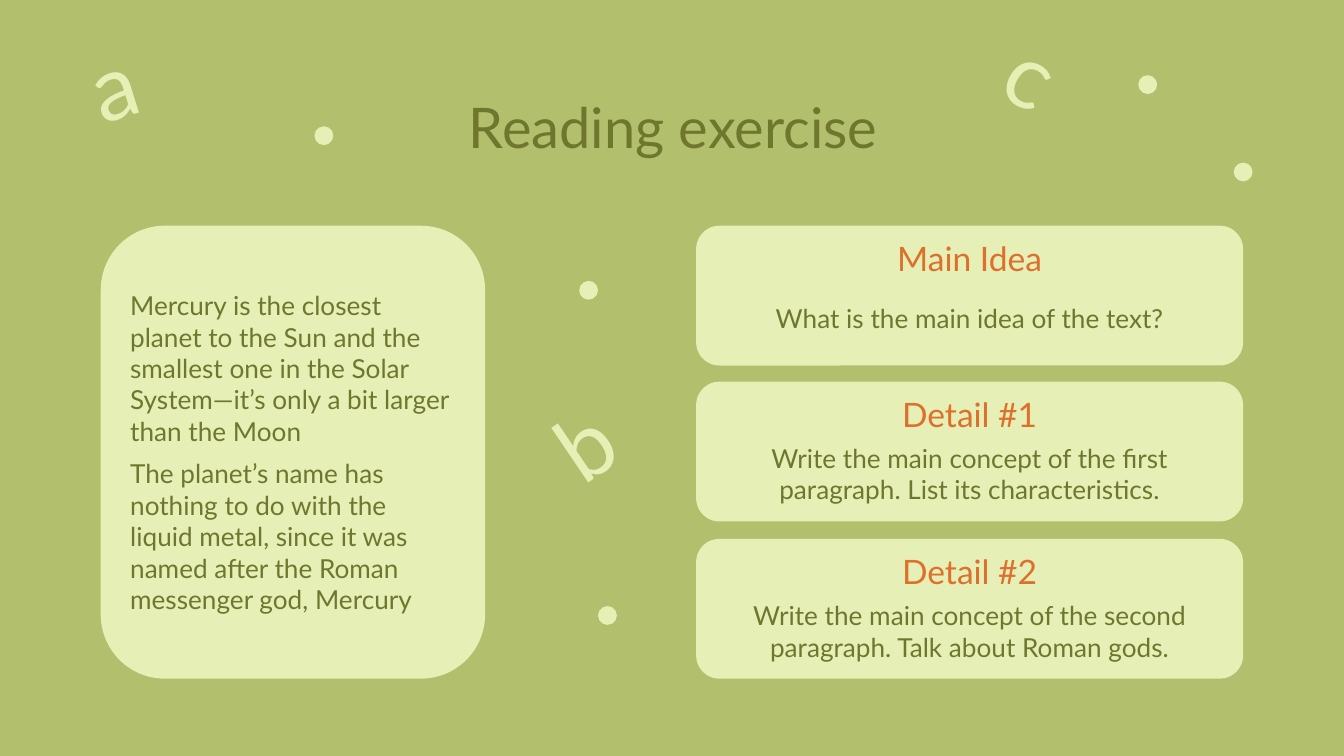
"""Build the reading exercise slide."""
from pptx import Presentation
from pptx import util as u
from pptx.dml.color import RGBColor
from pptx.enum import shapes, text

PX = u.Inches(1) // 100
COLOURS = {
    "background": "B2BF6D",
    "pale": "E6EFB5",
    "title": "6E772D",
    "body": "6F772E",
    "accent": "DD702D",
}


def add_shape(page, kind, left, top, width, height):
    shape = page.shapes.add_shape(kind, left * PX, top * PX, width * PX, height * PX)
    shape.shadow.inherit = False
    shape.fill.solid()
    shape.fill.fore_color.rgb = RGBColor.from_string(COLOURS["pale"])
    shape.line.fill.background()


def add_text(page, place, paragraphs, size, colour, align=text.PP_ALIGN.CENTER):
    left, top, width, height = place
    box = page.shapes.add_textbox(left * PX, top * PX, width * PX, height * PX)
    frame = box.text_frame
    frame.word_wrap = True
    frame.vertical_anchor = text.MSO_ANCHOR.MIDDLE
    frame.margin_left = frame.margin_right = 10 * PX
    frame.margin_top = frame.margin_bottom = 10 * PX
    for index, wording in enumerate(paragraphs):
        para = frame.add_paragraph() if index else frame.paragraphs[0]
        para.alignment = align
        if index:
            para.space_before = para.space_after = u.Pt(6)
        span = para.add_run()
        span.text = wording
        span.font.name = "Lato"
        span.font.size = u.Pt(size)
        span.font.color.rgb = RGBColor.from_string(COLOURS[colour])
    return box


deck = Presentation()
deck.slide_width = 1000 * PX
deck.slide_height = u.Inches(5.625)
page = deck.slides.add_slide(deck.slide_layouts[6])
page.background.fill.solid()
page.background.fill.fore_color.rgb = RGBColor.from_string(COLOURS["background"])

add_text(page, (75, 58, 852, 71), ["Reading exercise"], 30, "title")

passage = [
    "Mercury is the closest planet to the Sun and the smallest one in the Solar "
    "System—it’s only a bit larger than the Moon",
    "The planet’s name has nothing to do with the liquid metal, since it was named "
    "after the Roman messenger god, Mercury",
]
add_shape(page, shapes.MSO_SHAPE.ROUNDED_RECTANGLE, 75, 168, 286, 337)
add_text(page, (87, 195, 262, 283), passage, 14, "body", text.PP_ALIGN.LEFT)

cards = [
    ("Main Idea", "What is the main idea of the text?"),
    ("Detail #1", "Write the main concept of the first paragraph. List its characteristics."),
    ("Detail #2", "Write the main concept of the second paragraph. Talk about Roman gods."),
]
for index, (heading, prompt) in enumerate(cards):
    top = 168 + index * 233 // 2
    add_shape(page, shapes.MSO_SHAPE.ROUNDED_RECTANGLE, 518, top, 407, 104)
    add_text(page, (526, top + 8, 391, 32), [heading], 18, "accent")
    add_text(page, (526, top + 41, 391, 55), [prompt], 14, "body")

letters = [("a", 58, 33, 342.6), ("b", 407, 302, 325.9), ("c", 743, 24, 29.9)]
for letter, left, top, angle in letters:
    box = add_text(page, (left, top, 49, 59), [letter], 48, "pale", text.PP_ALIGN.LEFT)
    box.rotation = angle

for left, top in [(847, 56), (431, 209), (445, 451), (234, 94), (918, 121)]:
    add_shape(page, shapes.MSO_SHAPE.OVAL, left, top, 14, 14)

deck.save("out.pptx")
